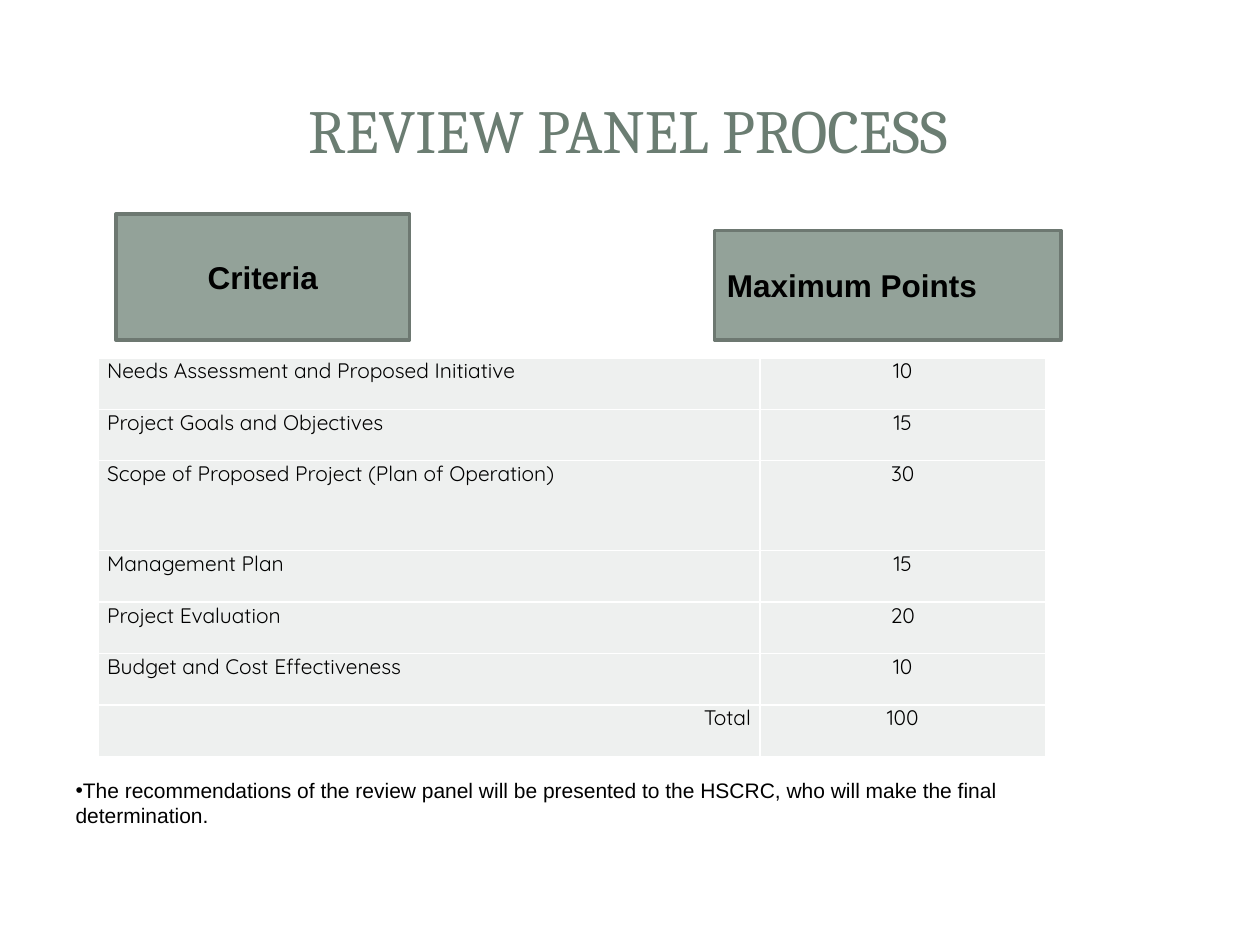
from lxml import etree
from pptx import Presentation
from pptx.dml.color import RGBColor
from pptx.enum.shapes import MSO_SHAPE
from pptx.enum.text import MSO_ANCHOR, MSO_AUTO_SIZE, PP_ALIGN
from pptx.oxml.ns import qn
from pptx.util import Inches, Pt

LEFT, MID, RIGHT = PP_ALIGN.LEFT, PP_ALIGN.CENTER, PP_ALIGN.RIGHT
TOP, CENTER = MSO_ANCHOR.TOP, MSO_ANCHOR.MIDDLE
RECT = MSO_SHAPE.RECTANGLE
FIXED = MSO_AUTO_SIZE.NONE

BLACK = RGBColor(0x00, 0x00, 0x00)
WHITE = RGBColor(0xFF, 0xFF, 0xFF)
GREEN = RGBColor(0x6B, 0x7D, 0x72)
SAGE = RGBColor(0x93, 0xA2, 0x99)
EDGE = RGBColor(0x6D, 0x78, 0x71)
PALE = RGBColor(0xEE, 0xF0, 0xEF)

COLS, ROWS = 100, 75  # grid of the slide
SCORES = [
    ("Needs Assessment and Proposed Initiative", 10),
    ("Project Goals and Objectives", 15),
    ("Scope of Proposed Project (Plan of Operation)", 30),
    ("Management Plan", 15),
    ("Project Evaluation", 20),
    ("Budget and Cost Effectiveness", 10),
]


def write(frame, text, font="Arial", size=12, color=BLACK, bold=False,
          align=LEFT, after=0):
    frame.word_wrap = True
    para = frame.paragraphs[0]
    para.alignment = align
    para.space_before, para.space_after = Pt(0), Pt(after)
    run = para.add_run()
    run.text = text
    run.font.name, run.font.size = font, Pt(size)
    run.font.bold, run.font.color.rgb = bold, color
    return para


class Page:
    """Holds the style and the current slide; lengths are grid units."""

    def __init__(self, deck):
        self.wide, self.high = deck.slide_width, deck.slide_height
        self.slide = deck.slides.add_slide(deck.slide_layouts[1])
        self.shapes = self.slide.shapes

    def x(self, cols):
        return round(self.wide * cols / COLS)

    def y(self, rows):
        return round(self.high * rows / ROWS)

    def area(self, left, top, width, height):
        return self.x(left), self.y(top), self.x(width), self.y(height)

    def move(self, shape, *area):
        shape.left, shape.top, shape.width, shape.height = self.area(*area)

    def title(self, text, *area):
        shape = self.shapes.title
        self.move(shape, *area)
        frame = shape.text_frame
        frame.auto_size, frame.vertical_anchor = FIXED, CENTER
        write(frame, text, font="Cambria", size=35, color=GREEN, align=MID)

    def note(self, text, *area):
        """Fill the body placeholder with one unindented bullet."""
        shape = self.slide.placeholders[1]
        self.move(shape, *area)
        frame = shape.text_frame
        frame.auto_size, frame.vertical_anchor = FIXED, TOP
        props = write(frame, text)._p.get_or_add_pPr()
        props.set("marL", "0")
        props.set("indent", "0")
        etree.SubElement(props, qn("a:buChar"), char="•")

    def box(self, text, *area, align=MID):
        shape = self.shapes.add_shape(RECT, *self.area(*area))
        shape.shadow.inherit = False
        shape.fill.solid()
        shape.fill.fore_color.rgb = SAGE
        shape.line.color.rgb, shape.line.width = EDGE, Pt(2)
        shape.text_frame.vertical_anchor = CENTER
        write(shape.text_frame, text, size=18, bold=True, align=align)

    def cell(self, cell, text, align):
        cell.margin_left = cell.margin_right = Inches(0.07)
        cell.margin_top = cell.margin_bottom = 0
        props = cell._tc.get_or_add_tcPr()
        for side in ("lnL", "lnR", "lnT", "lnB"):
            line = etree.SubElement(props, qn(f"a:{side}"), w=str(Pt(1)))
            fill = etree.SubElement(line, qn("a:solidFill"))
            etree.SubElement(fill, qn("a:srgbClr"), val=str(WHITE))
        cell.fill.solid()
        cell.fill.fore_color.rgb = PALE
        write(cell.text_frame, text, font="Quicksand", align=align, after=6)

    def table(self, rows, left, top, widths, heights):
        area = self.area(left, top, sum(widths), sum(heights))
        table = self.shapes.add_table(len(rows), len(widths), *area).table
        table.first_row = table.horz_banding = False
        for col, width in zip(table.columns, widths):
            col.width = self.x(width)
        for row, height, (name, score) in zip(table.rows, heights, rows):
            row.height = self.y(height)
            side = RIGHT if name == "Total" else LEFT
            self.cell(row.cells[0], name, side)
            self.cell(row.cells[1], str(score), MID)


def main():
    deck = Presentation()
    deck.slide_width, deck.slide_height = Inches(10), Inches(7.5)
    page = Page(deck)
    page.title("REVIEW PANEL PROCESS", 4.7, 4.5, 90.3, 11.4)
    total = sum(score for _, score in SCORES)
    heights = [7.15 if name.startswith("Scope") else 4.08
               for name, _ in SCORES] + [4.08]
    page.table(SCORES + [("Total", total)], 7.8, 28.4, (52.5, 22.7), heights)
    page.note("The recommendations of the review panel will be presented to "
              "the HSCRC, who will make the final determination.",
              5, 61.2, 80.8, 8.1)
    page.box("Criteria", 9.2, 17, 23.3, 10)
    page.box("Maximum Points", 56.7, 18.3, 27.5, 8.7, align=LEFT)
    deck.save("out.pptx")


if __name__ == "__main__":
    main()
